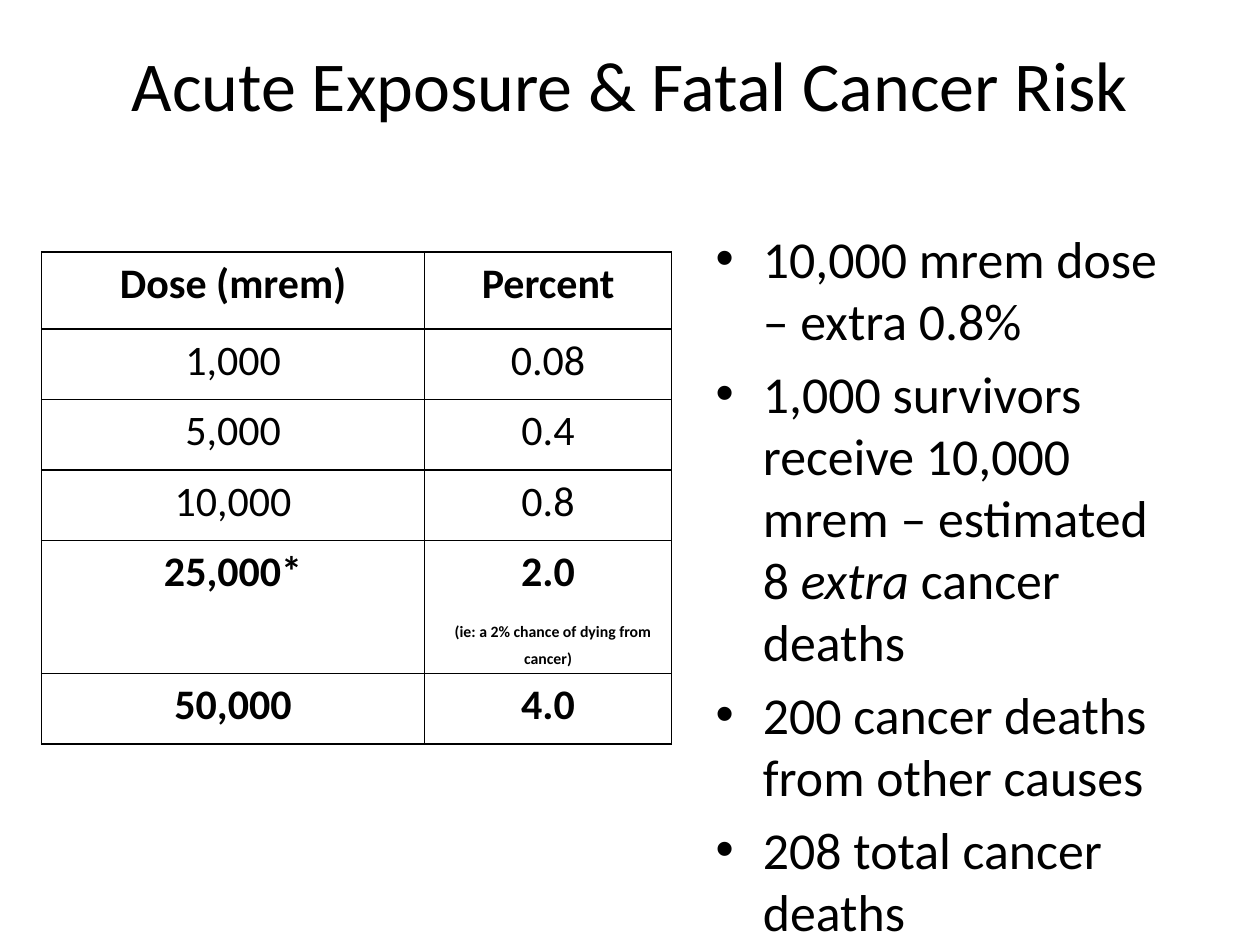
from lxml.etree import SubElement
from pptx import Presentation
from pptx.dml.color import RGBColor
from pptx.enum.text import MSO_ANCHOR, MSO_AUTO_SIZE, PP_ALIGN
from pptx.oxml.ns import qn
from pptx.util import Inches, Pt

THEME = {
    "font": "Calibri",
    "ink": RGBColor(0x00, 0x00, 0x00),
    "paper": RGBColor(0xFF, 0xFF, 0xFF),
    "title": 40, "body": 29.6, "cell": 24, "note": 9,
}


def style(font, size, bold=False):
    font.name, font.size, font.bold = THEME["font"], Pt(size), bold
    font.color.rgb = THEME["ink"]


def add_border(cell):
    properties = cell._tc.get_or_add_tcPr()
    for side in ("a:lnL", "a:lnR", "a:lnT", "a:lnB"):
        line = SubElement(properties, qn(side), w=str(Pt(1)))
        fill = SubElement(line, qn("a:solidFill"))
        SubElement(fill, qn("a:srgbClr"), val=str(THEME["ink"]))


presentation = Presentation()
presentation.slide_width, presentation.slide_height = Inches(10), Inches(7.5)
slide = presentation.slides.add_slide(presentation.slide_layouts[1])
title, findings = slide.placeholders

# Title across the full width
title.left, title.top = 0, Inches(0.25)
title.width, title.height = presentation.slide_width, Inches(0.83)
title.text_frame.text = "Acute Exposure & Fatal Cancer Risk"
title.text_frame.vertical_anchor = MSO_ANCHOR.MIDDLE
title.text_frame.paragraphs[0].alignment = PP_ALIGN.CENTER
style(title.text_frame.paragraphs[0].font, THEME["title"])

# Findings, each a list of (text, italic) runs
findings.left, findings.top = Inches(5.58), Inches(1.75)
findings.width, findings.height = Inches(3.92), Inches(4.95)
findings.text_frame.auto_size = MSO_AUTO_SIZE.NONE
finding_runs = [
    [("10,000 mrem dose – extra 0.8%", False)],
    [("1,000 survivors receive 10,000 mrem – estimated 8 ", False),
     ("extra", True), (" cancer deaths", False)],
    [("200 cancer deaths from other causes", False)],
    [("208 total cancer deaths", False)],
]
for number, runs in enumerate(finding_runs):
    frame = findings.text_frame
    finding = frame.add_paragraph() if number else frame.paragraphs[0]
    style(finding.font, THEME["body"])
    for text, italic in runs:
        run = finding.add_run()
        run.text = text
        if italic:
            run.font.italic = True

# Dose table: dose, percent, bold
doses = [
    ("Dose (mrem)", "Percent", True),
    ("1,000", "0.08", False),
    ("5,000", "0.4", False),
    ("10,000", "0.8", False),
    ("25,000*", "2.0", True),
    ("50,000", "4.0", True),
]
column_widths = [3.04, 1.96]
row_heights = [0.61, 0.56, 0.56, 0.56, 0.82, 0.56]
dose_table = slide.shapes.add_table(
    len(doses), len(column_widths), Inches(0.33), Inches(2),
    Inches(sum(column_widths)), Inches(sum(row_heights))).table
for column, width in zip(dose_table.columns, column_widths):
    column.width = Inches(width)
for row, height, (*values, bold) in zip(dose_table.rows, row_heights, doses):
    row.height = Inches(height)
    for cell, value in zip(row.cells, values):
        add_border(cell)
        cell.fill.solid()
        cell.fill.fore_color.rgb = THEME["paper"]
        cell.text = value
        cell.text_frame.paragraphs[0].alignment = PP_ALIGN.CENTER
        style(cell.text_frame.paragraphs[0].font, THEME["cell"], bold)

# Remark below the 2.0 percent value
chance_cell = dose_table.cell(4, 1)
chance_cell.margin_bottom = Inches(0.04)
chance = chance_cell.text_frame.add_paragraph()
chance.alignment = PP_ALIGN.CENTER
for text, size in ((" ", THEME["cell"]),
                   ("(ie: a 2% chance of dying from cancer)", THEME["note"])):
    run = chance.add_run()
    run.text = text
    style(run.font, size, bold=True)

presentation.save("out.pptx")
